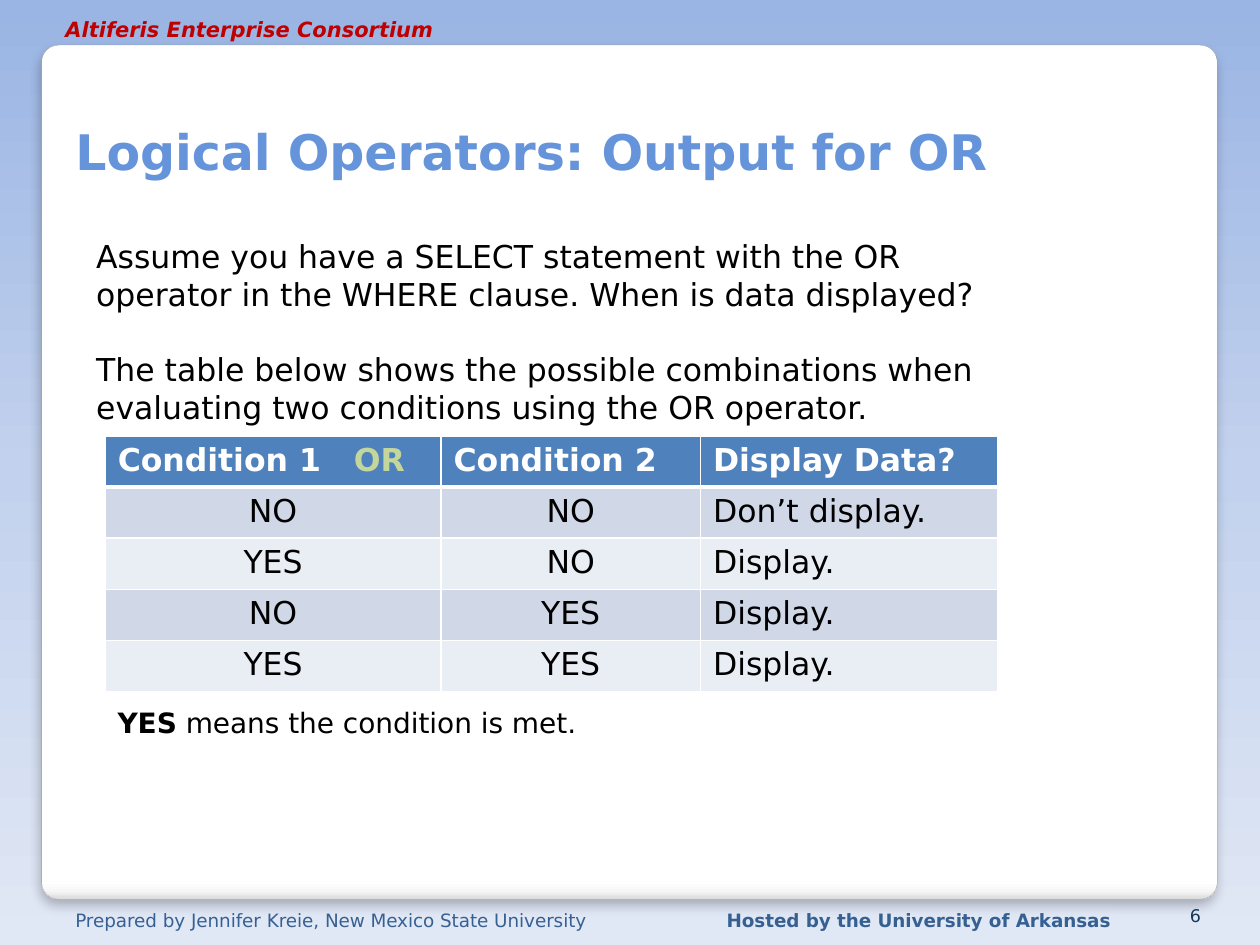
from dataclasses import dataclass

from lxml import etree
from pptx import Presentation
from pptx.dml.color import RGBColor
from pptx.enum.shapes import MSO_SHAPE
from pptx.enum.text import MSO_ANCHOR, PP_ALIGN
from pptx.oxml import parse_xml
from pptx.oxml.ns import nsdecls, qn
from pptx.util import Cm, Pt

LEFT, CENTER, RIGHT = PP_ALIGN.LEFT, PP_ALIGN.CENTER, PP_ALIGN.RIGHT
TOP, BOTTOM = MSO_ANCHOR.TOP, MSO_ANCHOR.BOTTOM
ROUNDED = MSO_SHAPE.ROUNDED_RECTANGLE


@dataclass(frozen=True)
class Theme:
    font: str = "DejaVu Sans"
    black: str = "000000"
    white: str = "FFFFFF"
    title: str = "6594DA"
    brand: str = "C00000"
    footer: str = "376092"
    number: str = "17375E"
    header: str = "4F81BD"
    operator: str = "C3D69B"
    bands: tuple = ("D0D8E8", "E9EDF4")
    panel_line: str = "A4A4A4"
    sky: tuple = ((0, "9AB5E4"), (50, "C2D1ED"), (100, "E1E8F5"))
    paper: tuple = ((0, "FFFFFF"), (98, "FFFFFF"), (99, "F7F7F7"), (100, "DADADA"))
    title_size: float = 28
    body_size: float = 18
    note_size: float = 16
    brand_size: float = 12
    footer_size: float = 10.5
    number_size: float = 10


def write(p, text, *, size, color, font, bold=False, italic=False):
    """Append one formatted run to a paragraph."""
    r = p.add_run()
    r.text = text
    r.font.name, r.font.size = font, Pt(size)
    r.font.bold, r.font.italic = bold, italic
    r.font.color.rgb = RGBColor.from_string(color)


def set_gradient(fill, element, stops):
    """Fill from top to bottom with (percent, colour) stops."""
    fill.gradient()
    fill.gradient_angle = 270
    stop_list = next(element.iter(qn("a:gsLst")))
    for old in list(stop_list):
        stop_list.remove(old)
    for percent, color in stops:
        stop = etree.SubElement(stop_list, qn("a:gs"), pos=str(percent * 1000))
        etree.SubElement(stop, qn("a:srgbClr"), val=color)


def set_borders(cell, color, **widths):
    """Draw cell edges; the keywords L, R, T and B give widths in points."""
    tc_pr = cell._tc.get_or_add_tcPr()
    for i, side in enumerate("LRTB"):
        tc_pr.insert(i, parse_xml(
            f'<a:ln{side} {nsdecls("a")} w="{Pt(widths.get(side, 1))}"><a:solidFill>'
            f'<a:srgbClr val="{color}"/></a:solidFill></a:ln{side}>'))


def set_tab(p, position):
    tabs = etree.SubElement(p._p.get_or_add_pPr(), qn("a:tabLst"))
    etree.SubElement(tabs, qn("a:tab"), pos=str(position), algn="l")


class SlideBuilder:
    def __init__(self, s, theme):
        self.s, self.theme = s, theme

    def background(self):
        set_gradient(self.s.background.fill, self.s.element, self.theme.sky)

    def panel(self, x, y, w, h):
        sp = self.s.shapes.add_shape(ROUNDED, Cm(x), Cm(y), Cm(w), Cm(h))
        sp.adjustments[0] = 0.02
        set_gradient(sp.fill, sp.element, self.theme.paper)
        sp.line.color.rgb = RGBColor.from_string(self.theme.panel_line)
        sp.line.width = Pt(0.16)
        sp.element.spPr.append(parse_xml(
            f'<a:effectLst {nsdecls("a")}><a:outerShdw blurRad="{Pt(6)}" dist="{Pt(4)}"'
            f' dir="5400000" rotWithShape="0"><a:srgbClr val="{self.theme.black}">'
            '<a:alpha val="25000"/></a:srgbClr></a:outerShdw></a:effectLst>'))

    def text(self, x, y, w, h, *paragraphs, align=LEFT, anchor=TOP, gap=0, **style):
        """Add a text box; a paragraph is a list of (text, format) runs."""
        tf = self.s.shapes.add_textbox(Cm(x), Cm(y), Cm(w), Cm(h)).text_frame
        tf.word_wrap = True
        tf.vertical_anchor = anchor
        for i, runs in enumerate(paragraphs):
            p = tf.add_paragraph() if i else tf.paragraphs[0]
            p.alignment = align
            if i:
                p.space_before = Pt(gap)
            for text, changes in runs:
                write(p, text, font=self.theme.font, **(style | changes))

    def table(self, x, y, widths, row_height, header, rows):
        t = self.theme
        table = self.s.shapes.add_table(
            len(rows) + 1, len(widths), Cm(x), Cm(y),
            Cm(sum(widths)), Cm(row_height * (len(rows) + 1))).table
        for column, width in zip(table.columns, widths):
            column.width = Cm(width)
        for i, row in enumerate([header, *rows]):
            table.rows[i].height = Cm(row_height)
            for j, text in enumerate(row):
                cell = table.cell(i, j)
                cell.fill.solid()
                cell.fill.fore_color.rgb = RGBColor.from_string(
                    t.bands[(i - 1) % 2] if i else t.header)
                set_borders(cell, t.white, T=3 if i == 1 else 1, B=1 if i else 3)
                p = cell.text_frame.paragraphs[0]
                p.alignment = CENTER if i and j < 2 else LEFT
                write(p, text, font=t.font, size=t.body_size, bold=i == 0,
                      color=t.black if i else t.white)
        return table


def main():
    t = Theme()
    prs = Presentation()
    prs.slide_width, prs.slide_height = Cm(25.4), Cm(19.05)
    slide = SlideBuilder(prs.slides.add_slide(prs.slide_layouts[6]), t)

    slide.background()
    slide.panel(0.84, 0.91, 23.7, 17.22)

    footer = dict(size=t.footer_size, color=t.footer)
    slide.text(1.27, 18.21, 11.33, 0.58,
               [("Prepared by Jennifer Kreie, New Mexico State University", {})], **footer)
    slide.text(14.4, 18.21, 8.46, 0.58,
               [("Hosted by the University of Arkansas", {})], bold=True, **footer)
    slide.text(1.07, 0.2, 8.46, 0.58, [("Altiferis Enterprise Consortium", {})],
               size=t.brand_size, color=t.brand, bold=True, italic=True)
    slide.text(1.27, 0.84, 22.73, 2.92, [("Logical Operators: Output for OR", {})],
               size=t.title_size, color=t.title, bold=True, anchor=BOTTOM)
    slide.text(23.19, 18.21, 1.27, 0.58, [("6", {})],
               size=t.number_size, color=t.number, align=RIGHT, anchor=BOTTOM)

    table = slide.table(
        2.12, 8.79, (6.77, 5.23, 5.99), 1.03,
        ("Condition 1", "Condition 2", "Display Data?"),
        [("NO", "NO", "Don’t display."),
         ("YES", "NO", "Display."),
         ("NO", "YES", "Display."),
         ("YES", "YES", "Display.")])
    p = table.cell(0, 0).text_frame.paragraphs[0]
    set_tab(p, Cm(4.76))
    write(p, "\tOR", font=t.font, size=t.body_size, color=t.operator, bold=True)

    slide.text(
        1.69, 4.65, 19.25, 4.11,
        [("Assume you have a SELECT statement with the OR operator in the WHERE clause. "
          "When is data displayed?", {})],
        [("The table below shows the possible combinations when evaluating two "
          "conditions using the OR operator.", {})],
        size=t.body_size, color=t.black, gap=21.5)
    slide.text(2.12, 14.1, 17.58, 0.94,
               [("YES", dict(bold=True)), (" means the condition is met.", {})],
               size=t.note_size, color=t.black)
    prs.save("out.pptx")


if __name__ == "__main__":
    main()
